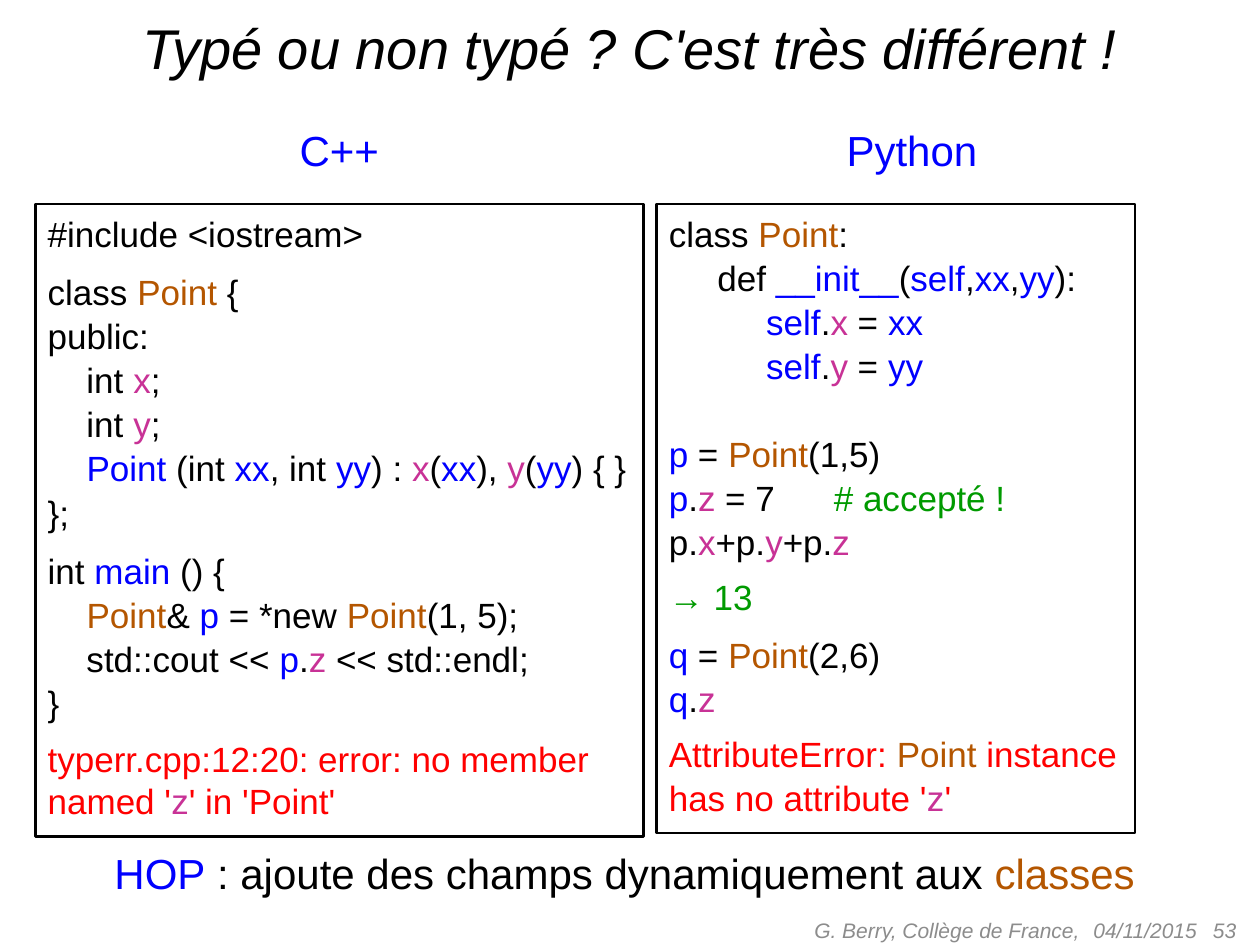
from dataclasses import dataclass

from lxml import etree
from pptx import Presentation
from pptx import util as u
from pptx.dml.color import RGBColor
from pptx.enum import shapes, text
from pptx.oxml import ns


@dataclass(frozen=True)
class Theme:
    font: str = "Arial"
    black: str = "000000"
    blue: str = "0000FF"
    orange: str = "B45600"
    pink: str = "C83296"
    green: str = "009A00"
    red: str = "FF0000"
    grey: str = "8C8C8C"
    title: int = 32
    heading: int = 24
    code: int = 20
    footer: int = 12
    leading: float = 1.05


THEME = Theme()

# Markup: |bword| gives the word the colour whose letter follows the bar.
MARKS = {"b": THEME.blue, "o": THEME.orange, "p": THEME.pink, "g": THEME.green}

# Each block of lines: space before in points, base colour, line spacing, lines.
CPP_CODE = [
    (0, THEME.black, THEME.leading, ["#include <iostream>"]),
    (8, THEME.black, THEME.leading, [
        "class |oPoint| {",
        "public:",
        "    int |px|;",
        "    int |py|;",
        "    |bPoint| (int |bxx|, int |byy|) : |px|(|bxx|), |py|(|byy|) { }",
        "};",
    ]),
    (8, THEME.black, THEME.leading, [
        "int |bmain| () {",
        "    |oPoint|& |bp| = *new |oPoint|(1, 5);",
        "    std::cout << |bp|.|pz| << std::endl;",
        "}",
    ]),
    (8, THEME.red, 1.0, [
        "typerr.cpp:12:20: error: no member",
        "named '|pz|' in 'Point'",
    ]),
]
PYTHON_CODE = [
    (0, THEME.black, THEME.leading, [
        "class |oPoint|:",
        "     def |b__init__|(|bself|,|bxx|,|byy|):",
        "          |bself|.|px| = |bxx|",
        "          |bself|.|py| = |byy|",
    ]),
    (25, THEME.black, THEME.leading, [
        "|bp| = |oPoint|(1,5)",
        "|bp|.|pz| = 7\t|g# accepté !|",
        "p.|px|+p.|py|+p.|pz|",
    ]),
    (6, THEME.green, THEME.leading, ["→ 13"]),
    (8, THEME.black, THEME.leading, ["|bq| = |oPoint|(2,6)", "|bq|.|pz|"]),
    (6, THEME.red, THEME.leading, [
        "AttributeError: |oPoint| instance",
        "has no attribute '|pz|'",
    ]),
]
COMMENT_TAB = u.Inches(1.31)


def inches(*lengths):
    return [u.Inches(length) for length in lengths]


def write(para, words, size, color=THEME.black, italic=False, align=None,
          spacing=None, before=0):
    """Fill a paragraph with marked-up text."""
    para.alignment = align
    para.line_spacing = spacing
    if before:
        para.space_before = u.Pt(before)
    for index, part in enumerate(words.split("|")):
        marked = index % 2 == 1
        run = para.add_run()
        run.text = part[1:] if marked else part
        if not run.text:
            para._p.remove(run._r)
            continue
        run.font.name = THEME.font
        run.font.size = u.Pt(size)
        run.font.italic = italic
        run.font.color.rgb = RGBColor.from_string(MARKS[part[0]] if marked else color)


def add_tab(para, position):
    stops = etree.SubElement(para._p.get_or_add_pPr(), ns.qn("a:tabLst"))
    etree.SubElement(stops, ns.qn("a:tab"), pos=str(position), algn="l")


def add_title(page, box, words):
    title = page.shapes.title
    title.left, title.top, title.width, title.height = inches(*box)
    write(title.text_frame.paragraphs[0], words, THEME.title, italic=True,
          align=text.PP_ALIGN.CENTER)


def add_label(page, box, words, **look):
    """Unwrapped line of large text."""
    frame = page.shapes.add_textbox(*inches(*box)).text_frame
    frame.word_wrap = False
    frame.auto_size = text.MSO_AUTO_SIZE.SHAPE_TO_FIT_TEXT
    write(frame.paragraphs[0], words, THEME.heading, spacing=THEME.leading, **look)


def add_code(page, box, blocks):
    """Framed listing with its messages."""
    panel = page.shapes.add_shape(shapes.MSO_SHAPE.RECTANGLE, *inches(*box))
    panel.shadow.inherit = False
    panel.fill.background()
    panel.line.color.rgb = RGBColor.from_string(THEME.black)
    panel.line.width = u.Pt(1.5)
    frame = panel.text_frame
    frame.word_wrap = False
    frame.auto_size = text.MSO_AUTO_SIZE.SHAPE_TO_FIT_TEXT
    frame.vertical_anchor = text.MSO_ANCHOR.TOP
    frame.margin_bottom = u.Inches(0.07)
    para = None
    for gap, color, spacing, lines in blocks:
        for index, line in enumerate(lines):
            para = frame.add_paragraph() if para else frame.paragraphs[0]
            write(para, line, THEME.code, color, align=text.PP_ALIGN.LEFT,
                  spacing=spacing, before=0 if index else gap)
            if "\t" in line:
                add_tab(para, COMMENT_TAB)


def add_footer(page, top, height):
    """Author, date and page number on one line."""
    left, right = text.PP_ALIGN.LEFT, text.PP_ALIGN.RIGHT
    for start, width, words, align in (
        (5.5, 3.17, "G. Berry, Collège de France,", right),
        (8.58, 1.33, "04/11/2015", left),
        (7.58, 2.33, "53", right),
    ):
        frame = page.shapes.add_textbox(*inches(start, top, width, height)).text_frame
        frame.word_wrap = True
        frame.vertical_anchor = text.MSO_ANCHOR.MIDDLE
        write(frame.paragraphs[0], words, THEME.footer, THEME.grey,
              italic=True, align=align)


def main():
    deck = Presentation()
    deck.slide_width, deck.slide_height = inches(10, 7.5)
    page = deck.slides.add_slide(deck.slide_layouts[5])

    add_title(page, (0.25, 0.05, 9.5, 0.64), "Typé ou non typé ? C'est très différent !")
    # The two languages side by side
    add_label(page, (2.28, 0.92, 0.84, 0.52), "C++", color=THEME.blue)
    add_label(page, (6.62, 0.92, 1.25, 0.52), "Python", color=THEME.blue)
    add_code(page, (0.28, 1.62, 4.83, 5.02), CPP_CODE)
    add_code(page, (5.21, 1.62, 3.8, 4.99), PYTHON_CODE)
    # Conclusion and footer
    add_label(page, (0.81, 6.66, 8.38, 0.52),
              "|bHOP| : ajoute des champs dynamiquement aux |oclasses|")
    add_footer(page, 7.18, 0.4)

    deck.save("out.pptx")


if __name__ == "__main__":
    main()
